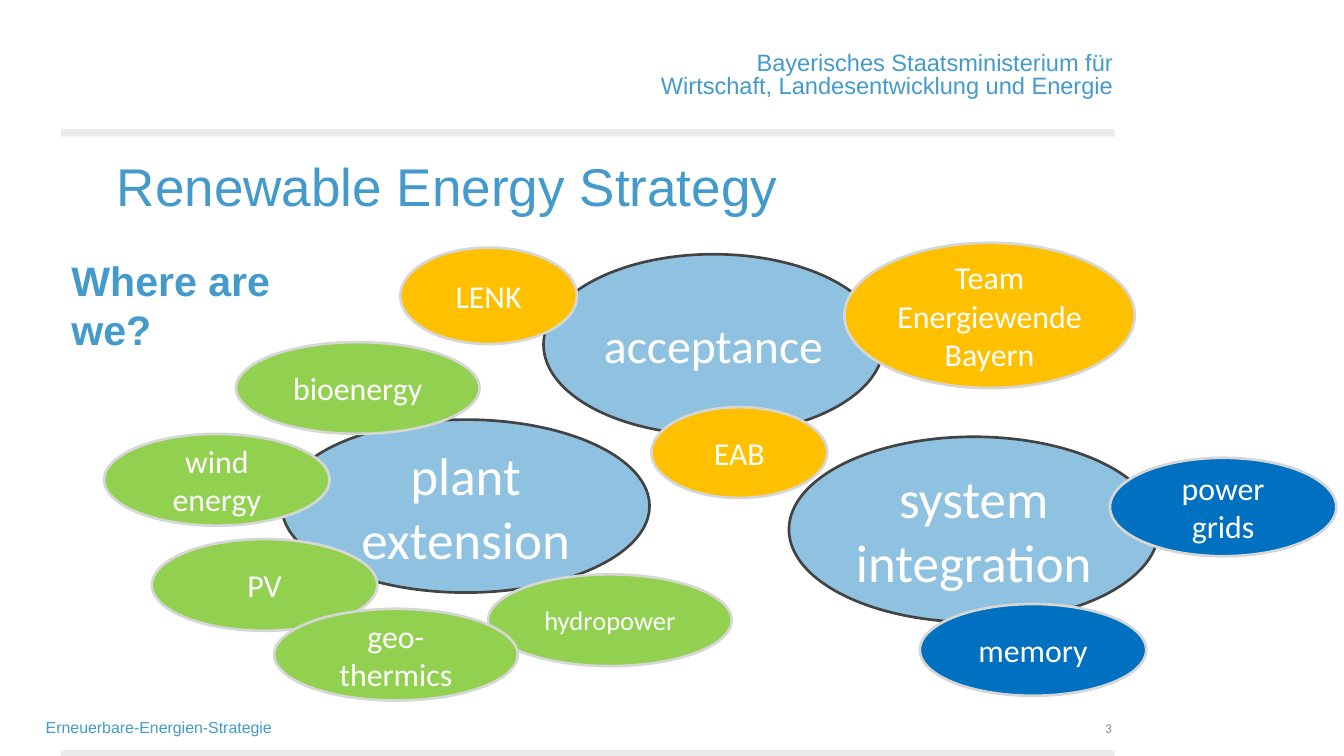
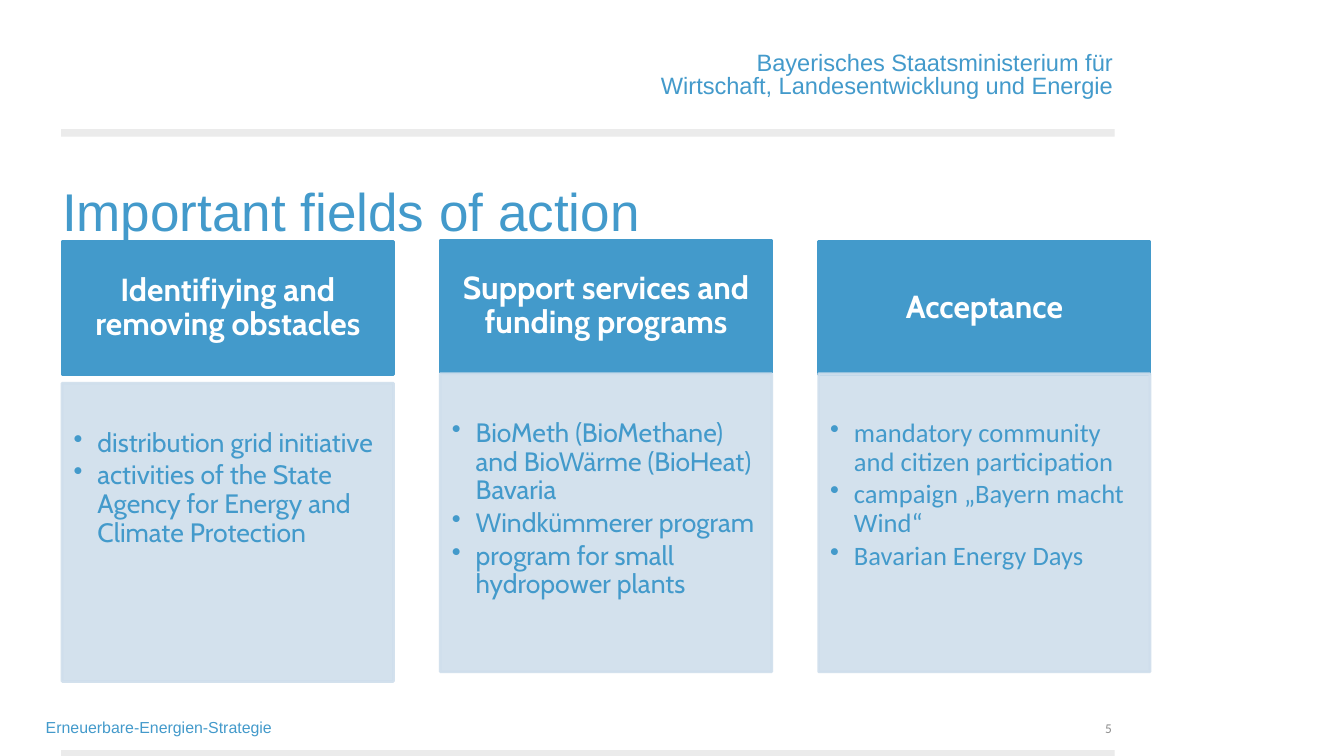
from dataclasses import dataclass

from lxml.etree import SubElement
from pptx import Presentation
from pptx.dml.color import RGBColor
from pptx.enum.shapes import MSO_SHAPE
from pptx.enum.text import MSO_ANCHOR, MSO_AUTO_SIZE, PP_ALIGN
from pptx.oxml.ns import qn
from pptx.util import Inches, Pt


@dataclass(frozen=True)
class Theme:
    # Colours
    blue: str = "439ACB"
    band: str = "EBEBEB"
    number: str = "8C8C8C"
    panel: str = "CFDEEC"
    white: str = "FFFFFF"
    core: str = "8EC2E0"
    core_line: str = "434343"
    satellite_line: str = "D6D6D6"
    amber: str = "FFC000"
    navy: str = "0070C0"
    green: str = "92D050"
    # Fonts
    sans: str = "Arial"
    label: str = "Calibri"
    card: str = "Cabin"
    # Type sizes
    title_size: float = 40
    question_size: float = 31
    head_size: float = 24
    list_size: float = 20
    ministry_size: float = 17.8
    footer_size: float = 12
    number_size: float = 10.1


T = Theme()
PADDING = (0.1, 0.05, 0.1, 0.05)
NO_PADDING = (0, 0, 0, 0)


def apply(obj, values):
    for name, value in values.items():
        setattr(obj, name, value)


def inches(values):
    return [Inches(v) for v in values]


def style(font, size, color=T.blue, bold=False):
    return {"name": font, "size": Pt(size), "bold": bold, "color": color}


def write(sp, lines, font, para=None, anchor=MSO_ANCHOR.TOP, pad=PADDING, bullet=False):
    """Fill a shape with one paragraph per line."""
    tf = sp.text_frame
    sides = ("margin_left", "margin_top", "margin_right", "margin_bottom")
    apply(tf, {"word_wrap": True, "auto_size": MSO_AUTO_SIZE.NONE, "vertical_anchor": anchor})
    apply(tf, dict(zip(sides, inches(pad))))
    for i, line in enumerate(lines):
        p = tf.paragraphs[0] if i == 0 else tf.add_paragraph()
        apply(p, {"alignment": PP_ALIGN.LEFT, "space_before": Pt(0), **(para or {})})
        if bullet:
            pPr = p._p.get_or_add_pPr()
            pPr.set("marL", str(Inches(0.25)))
            pPr.set("indent", str(Inches(-0.25)))
            SubElement(pPr, qn("a:buChar"), char="•")
        r = p.add_run()
        r.text = line
        apply(r.font, {k: v for k, v in font.items() if k != "color"})
        r.font.color.rgb = RGBColor.from_string(font["color"])


def add_text(slide, box, lines, font, **layout):
    sp = slide.shapes.add_textbox(*inches(box))
    write(sp, lines, font, **layout)
    return sp


def add_shape(slide, kind, box, fill, line=None, opacity=100):
    sp = slide.shapes.add_shape(kind, *inches(box))
    sp.shadow.inherit = False
    sp.fill.solid()
    sp.fill.fore_color.rgb = RGBColor.from_string(fill)
    if line:
        sp.line.color.rgb = RGBColor.from_string(line)
        sp.line.width = Pt(2)
    else:
        sp.line.fill.background()
    if opacity < 100:
        for color in sp._element.spPr.iter(qn("a:srgbClr")):
            SubElement(color, qn("a:alpha"), val=str(opacity * 1000))
    return sp


def add_frame(prs, number, title, title_box, title_align):
    """Add a slide with the shared header, bands, footer and title."""
    slide = prs.slides.add_slide(prs.slide_layouts[5])
    right = {"alignment": PP_ALIGN.RIGHT}

    # Header and bands
    add_text(slide, (0, 0.54, 11.65, 0.5),
             ["Bayerisches Staatsministerium für", "Wirtschaft, Landesentwicklung und Energie"],
             style(T.sans, T.ministry_size), para={**right, "line_spacing": Pt(17.8)},
             anchor=MSO_ANCHOR.BOTTOM, pad=NO_PADDING)
    for top, height in ((1.35, 0.08), (7.85, 0.06)):
        add_shape(slide, MSO_SHAPE.RECTANGLE, (0.64, top, 11.03, height), T.band)

    # Footer and slide number
    add_text(slide, (0.38, 7.46, 5.78, 0.33), ["Erneuerbare-Energien-Strategie"],
             style(T.sans, T.footer_size))
    add_text(slide, (10.32, 7.53, 1.32, 0.2), [number],
             style(T.label, T.number_size, T.number), para=right, pad=NO_PADDING)

    # Title
    sp = slide.shapes.title
    apply(sp, dict(zip(("left", "top", "width", "height"), inches(title_box))))
    write(sp, [title], style(T.sans, T.title_size), para={"alignment": title_align},
          pad=(0, 0.06, 0, 0))
    return slide


def add_bubbles(slide, box, bubbles):
    """Draw overlapping ellipses, back to front, relative to the box."""
    x, y, _, _ = box
    for text, fill, size, (dx, dy, w, h) in bubbles:
        line = T.core_line if fill == T.core else T.satellite_line
        sp = add_shape(slide, MSO_SHAPE.OVAL, (x + dx, y + dy, w, h), fill, line)
        write(sp, [text], style(T.label, size, T.white),
              para={"alignment": PP_ALIGN.CENTER}, anchor=MSO_ANCHOR.MIDDLE)


def add_card(slide, box, heading, items, list_font):
    """Place a heading at the top of the box and a list panel at its bottom."""
    x, y, w, h = box
    head_h, panel_h = 1.39, 3.12
    head = add_shape(slide, MSO_SHAPE.RECTANGLE, (x, y, w, head_h), T.blue, T.blue)
    write(head, [heading], style(T.card, T.head_size, T.white, True),
          para={"alignment": PP_ALIGN.CENTER, "line_spacing": 0.9},
          anchor=MSO_ANCHOR.MIDDLE, pad=(0.19, 0.11, 0.19, 0.11))
    panel = add_shape(slide, MSO_SHAPE.RECTANGLE, (x, y + h - panel_h, w, panel_h),
                      T.panel, T.panel, opacity=90)
    write(panel, items, style(list_font, T.list_size),
          para={"line_spacing": 0.9, "space_after": Pt(3)},
          pad=(0.12, 0.48, 0.16, 0.17), bullet=True)


def build_strategy(prs):
    slide = add_frame(prs, "3", "Renewable Energy Strategy",
                      (0.7, 1.54, 7.96, 0.56), PP_ALIGN.CENTER)
    add_bubbles(slide, (1.09, 2.54, 12.9, 4.79), [
        ("plant extension", T.core, 40, (1.86, 1.85, 3.85, 1.81)),
        ("acceptance", T.core, 36, (4.6, 0.12, 3.56, 1.89)),
        ("EAB", T.amber, 24, (5.73, 1.72, 1.84, 0.95)),
        ("LENK", T.amber, 24, (3.1, 0.05, 1.85, 1.01)),
        ("Team Energiewende Bayern", T.amber, 24, (7.75, 0, 3.04, 1.52)),
        ("system integration", T.core, 40, (7.17, 2.03, 3.87, 1.94)),
        ("memory", T.navy, 24, (8.54, 3.78, 2.37, 0.96)),
        ("power grids", T.navy, 24, (10.53, 2.25, 2.37, 1.03)),
        ("hydropower", T.green, 20, (4.02, 3.47, 2.55, 0.96)),
        ("PV", T.green, 24, (0.5, 3.1, 2.36, 0.96)),
        ("geo-thermics", T.green, 24, (1.78, 3.83, 2.55, 0.96)),
        ("wind energy", T.green, 24, (0, 2, 2.36, 0.96)),
        ("bioenergy", T.green, 24, (1.38, 1.04, 2.55, 0.96)),
    ])
    add_text(slide, (0.65, 2.62, 2.4, 1.14), ["Where are we?"],
             style(T.sans, T.question_size, bold=True))


def build_fields(prs):
    slide = add_frame(prs, "5", "Important fields of action",
                      (0.65, 1.81, 11, 0.56), PP_ALIGN.LEFT)
    # Top, height, heading, list font and list of each card
    cards = [
        (2.53, 4.6, "Identifiying and removing obstacles", T.card,
         ["distribution grid initiative",
          "activities of the State Agency for Energy and Climate Protection"]),
        (2.51, 4.52, "Support services and funding programs", T.card,
         ["BioMeth (BioMethane) and BioWärme (BioHeat) Bavaria",
          "Windkümmerer program",
          "program for small hydropower plants"]),
        (2.53, 4.5, "Acceptance", T.label,
         ["mandatory community and citizen participation",
          "campaign „Bayern macht Wind“",
          "Bavarian Energy Days"]),
    ]
    width, gap = 3.47, 0.49
    for i, (top, height, heading, font, items) in enumerate(cards):
        add_card(slide, (0.65 + i * (width + gap), top, width, height), heading, items, font)


def main():
    prs = Presentation()
    apply(prs, {"slide_width": Inches(14.07), "slide_height": Inches(7.91)})
    build_strategy(prs)
    build_fields(prs)
    prs.save("out.pptx")


if __name__ == "__main__":
    main()
